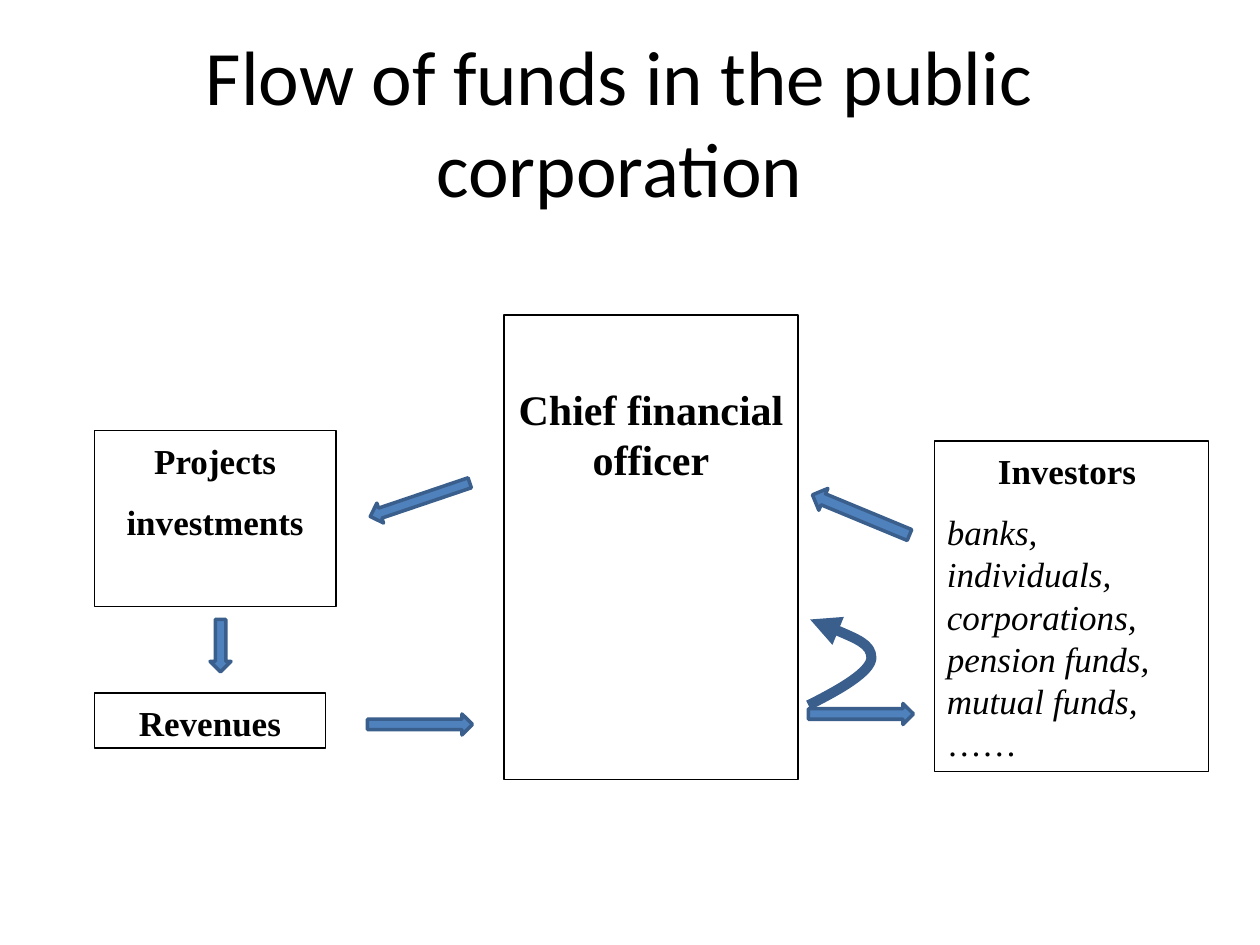
from dataclasses import dataclass

from lxml import etree
from pptx import Presentation
from pptx import util as u
from pptx.dml.color import RGBColor
from pptx.enum import shapes, text
from pptx.oxml.ns import qn

BLACK, BLUE, DARK_BLUE = "000000", "4F81BD", "3A5F8C"
SERIF = "Times New Roman"
BOLD = {"bold": True}
ITALIC = {"italic": True}
CENTER, LEFT = text.PP_ALIGN.CENTER, text.PP_ALIGN.LEFT


@dataclass
class Line:
    spans: list  # (wording, font format) pairs
    align: text.PP_ALIGN = CENTER


@dataclass
class Box:
    left: float
    top: float
    width: float
    height: float
    lines: list
    size: float = 20
    inset: float = 5


@dataclass
class Arrow:
    left: float
    top: float
    width: float = 60
    height: float = 12
    turn: float = 0


BOXES = [
    Box(534, 252, 156.5, 189, [
        Line([("Investors ", BOLD)]),
        Line([("banks, individuals, corporations, pension funds, mutual funds,", ITALIC),
              (" ……", {})], LEFT),
    ]),
    Box(54, 246, 138, 100.5, [Line([("Projects", BOLD)]), Line([("investments", BOLD)])]),
    Box(54, 396, 132, 31.5, [Line([("Revenues", BOLD)])]),
    Box(288, 180, 168, 265.5, [Line([("Chief financial officer", BOLD)])], 24, 39),
]

ARROWS = [
    Arrow(462, 287.5, height=13.5, turn=202.5),  # investors to officer
    Arrow(210, 279.5, turn=161.3),               # officer to projects
    Arrow(111, 363, width=30, turn=90),          # projects to revenues
    Arrow(210, 408),                             # revenues to officer
    Arrow(462, 402),                             # officer to investors
]

# Start point, then two control points and an end point per Bézier segment
REINVESTMENT = [(462, 403), (480, 394), (497.5, 384), (498, 376),
                (498, 368), (481, 361), (463, 354)]


def color(value: str) -> RGBColor:
    return RGBColor.from_string(value)


def set_format(target, values: dict) -> None:
    for name, value in values.items():
        setattr(target, name, value)


def set_line(shape, value: str, width: float) -> None:
    shape.line.color.rgb = color(value)
    shape.line.width = u.Pt(width)
    shape.shadow.inherit = False


def add_span(para, wording: str, face: str, size: float, extra: dict) -> None:
    span = para.add_run()
    span.text = wording
    set_format(span.font, {"name": face, "size": u.Pt(size), **extra})
    span.font.color.rgb = color(BLACK)


def add_box(page, item: Box) -> None:
    box = page.shapes.add_shape(
        shapes.MSO_SHAPE.RECTANGLE,
        *map(u.Pt, (item.left, item.top, item.width, item.height)))
    box.fill.background()
    set_line(box, BLACK, 0.75)
    frame = box.text_frame
    set_format(frame, {"word_wrap": True, "margin_top": u.Pt(item.inset),
                       "vertical_anchor": text.MSO_ANCHOR.TOP})
    for index, line in enumerate(item.lines):
        para = frame.add_paragraph() if index else frame.paragraphs[0]
        set_format(para, {"alignment": line.align,
                          "space_before": u.Pt(11 if index else 0)})
        for wording, extra in line.spans:
            add_span(para, wording, SERIF, item.size, extra)


def add_arrow(page, item: Arrow) -> None:
    arrow = page.shapes.add_shape(
        shapes.MSO_SHAPE.RIGHT_ARROW,
        *map(u.Pt, (item.left, item.top, item.width, item.height)))
    arrow.rotation = item.turn
    arrow.fill.solid()
    arrow.fill.fore_color.rgb = color(BLUE)
    set_line(arrow, DARK_BLUE, 2)


def add_curved_arrow(page, points: list) -> None:
    start, *others = [(u.Pt(x), u.Pt(y)) for x, y in points]
    builder = page.shapes.build_freeform(*start)
    builder.add_line_segments(others, close=False)
    curve = builder.convert_to_shape()
    curve.fill.background()
    set_line(curve, DARK_BLUE, 5.75)
    # Turn each three straight segments into one Bézier segment
    outline = next(curve.element.iter(qn("a:path")))
    straight = outline.findall(qn("a:lnTo"))
    for first in range(0, len(straight), 3):
        bezier = etree.SubElement(outline, qn("a:cubicBezTo"))
        for segment in straight[first:first + 3]:
            bezier.append(segment[0])
            outline.remove(segment)
    etree.SubElement(curve.line._get_or_add_ln(), qn("a:tailEnd"), type="triangle")


def main() -> None:
    deck = Presentation()
    deck.slide_width, deck.slide_height = u.Pt(720), u.Pt(540)
    page = deck.slides.add_slide(deck.slide_layouts[5])

    # Title
    title = page.shapes.title
    set_format(title, {"left": u.Pt(48), "top": u.Pt(18),
                       "width": u.Pt(612), "height": u.Pt(102)})
    title.text_frame.vertical_anchor = text.MSO_ANCHOR.MIDDLE
    heading = title.text_frame.paragraphs[0]
    heading.alignment = CENTER
    add_span(heading, "Flow of funds in the public corporation", "Calibri", 44, {})

    # Parties and the flows between them
    for box in BOXES:
        add_box(page, box)
    for arrow in ARROWS:
        add_arrow(page, arrow)
    add_curved_arrow(page, REINVESTMENT)

    deck.save("out.pptx")


if __name__ == "__main__":
    main()
